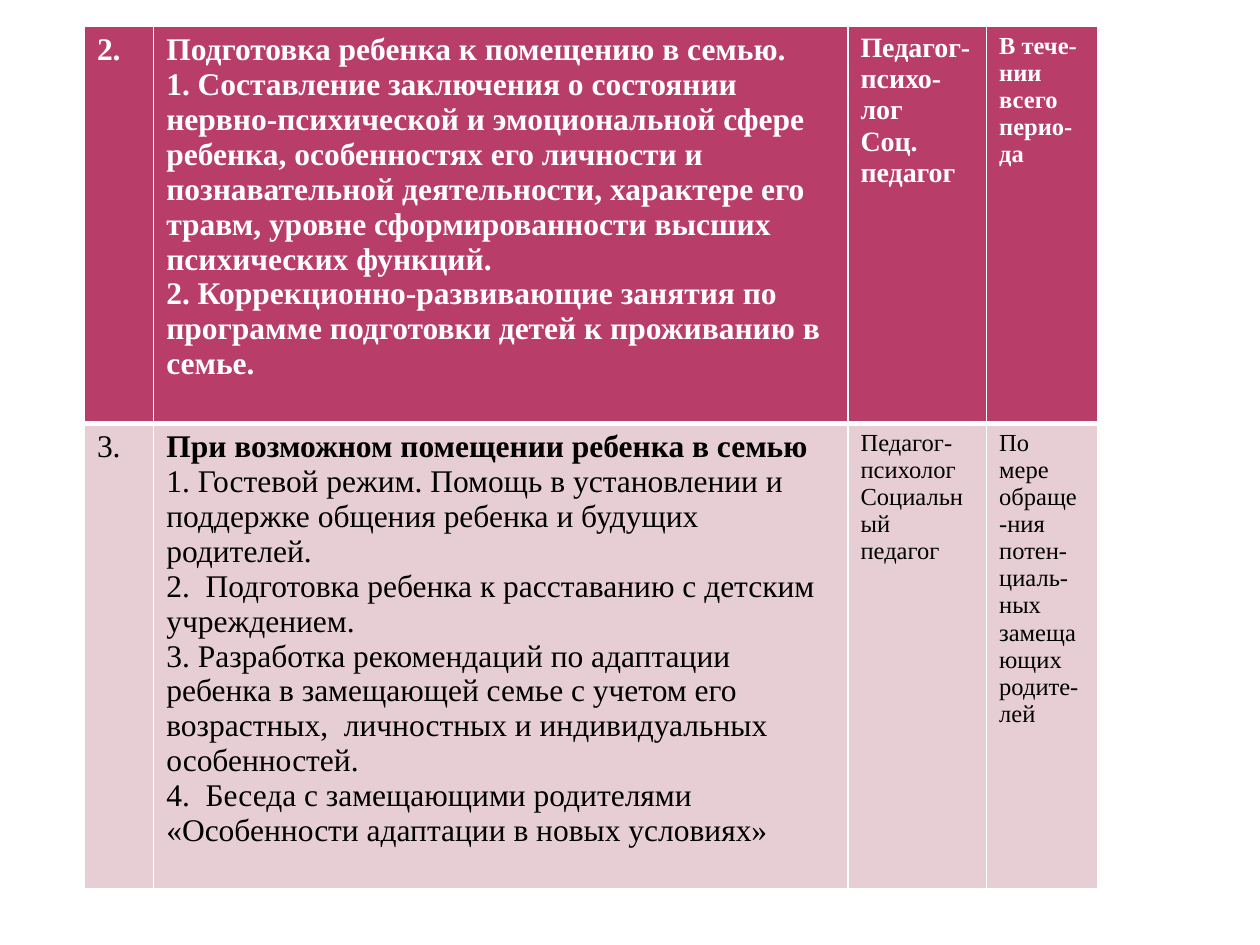
from lxml.etree import SubElement
from pptx import Presentation
from pptx.dml.color import RGBColor
from pptx.oxml.ns import qn
from pptx.util import Inches, Pt

FONT = "Times New Roman"
WHITE = RGBColor(0xFF, 0xFF, 0xFF)
BLACK = RGBColor(0, 0, 0)
CRIMSON = RGBColor(0xB8, 0x3D, 0x68)
PINK = RGBColor(0xE6, 0xCE, 0xD4)

# Content: each cell is (text size, paragraphs)
PREPARATION = [
    (18, ["2."]),
    (18, ["Подготовка ребенка к помещению в семью.",
          " Составление заключения о состоянии нервно-психической и эмоциональной "
          "сфере ребенка, особенностях его личности и познавательной деятельности, "
          "характере его травм, уровне сформированности высших психических функций.",
          " Коррекционно-развивающие занятия по программе подготовки детей "
          "к проживанию в семье."]),
    (16, ["Педагог-психо-лог", "Соц. педагог"]),
    (14, ["В тече-нии всего перио-да"]),
]
PLACEMENT = [
    (18, ["3."]),
    (18, ["При возможном помещении ребенка в семью",
          "1. Гостевой режим. Помощь в установлении и поддержке общения ребенка "
          "и будущих родителей.",
          "2.  Подготовка ребенка к расставанию с детским учреждением.",
          "3. Разработка рекомендаций по адаптации ребенка в замещающей семье "
          "с учетом его возрастных,  личностных и индивидуальных особенностей.",
          "4.  Беседа с замещающими родителями «Особенности адаптации "
          "в новых условиях»"]),
    (14, ["Педагог-психолог", "Социальный педагог"]),
    (14, ["По мере обраще-ния потен-циаль-ных замещающих родите-лей"]),
]
# Row: cells, height, fill, text colour, all bold, top and bottom border widths
ROWS = [
    (PREPARATION, 3.15, CRIMSON, WHITE, True, 1, 3),
    (PLACEMENT, 3.69, PINK, BLACK, False, 3, 1),
]
COLUMN_WIDTHS = [0.55, 5.51, 1.1, 0.88]
LEFT, TOP = 0.67, 0.21


def add_borders(cell, top, bottom):
    properties = cell._tc.get_or_add_tcPr()
    for side, width in (("L", 1), ("R", 1), ("T", top), ("B", bottom)):
        border = SubElement(properties, qn(f"a:ln{side}"), w=str(Pt(width)))
        SubElement(SubElement(border, qn("a:solidFill")), qn("a:srgbClr"), val=str(WHITE))


def add_number(paragraph):
    properties = paragraph._p.get_or_add_pPr()
    properties.set("marL", "0")
    properties.set("indent", "0")
    SubElement(properties, qn("a:buFont"), typeface="+mj-lt")
    SubElement(properties, qn("a:buAutoNum"), type="arabicPeriod")


def write_cell(cell, size, lines, colour, bold):
    cell.text_frame.text = "\n".join(lines)
    for index, paragraph in enumerate(cell.text_frame.paragraphs):
        if paragraph.text.startswith(" "):
            add_number(paragraph)
        heading = index == 0 and len(lines) > 2
        for run in paragraph.runs:
            run.font.name = FONT
            run.font.size = Pt(size)
            run.font.bold = bold or heading
            run.font.color.rgb = colour


prs = Presentation()
prs.slide_width, prs.slide_height = Inches(10), Inches(7.5)
slide = prs.slides.add_slide(prs.slide_layouts[6])

# Plan table
plan = slide.shapes.add_table(
    len(ROWS), len(COLUMN_WIDTHS), Inches(LEFT), Inches(TOP),
    Inches(sum(COLUMN_WIDTHS)), Inches(sum(row[1] for row in ROWS))).table
plan.horz_banding = False
for column, width in zip(plan.columns, COLUMN_WIDTHS):
    column.width = Inches(width)

for r, (cells, height, fill, colour, bold, top, bottom) in enumerate(ROWS):
    plan.rows[r].height = Inches(height)
    for c, (size, lines) in enumerate(cells):
        cell = plan.cell(r, c)
        add_borders(cell, top, bottom)
        cell.fill.solid()
        cell.fill.fore_color.rgb = fill
        write_cell(cell, size, lines, colour, bold)

prs.save("out.pptx")
